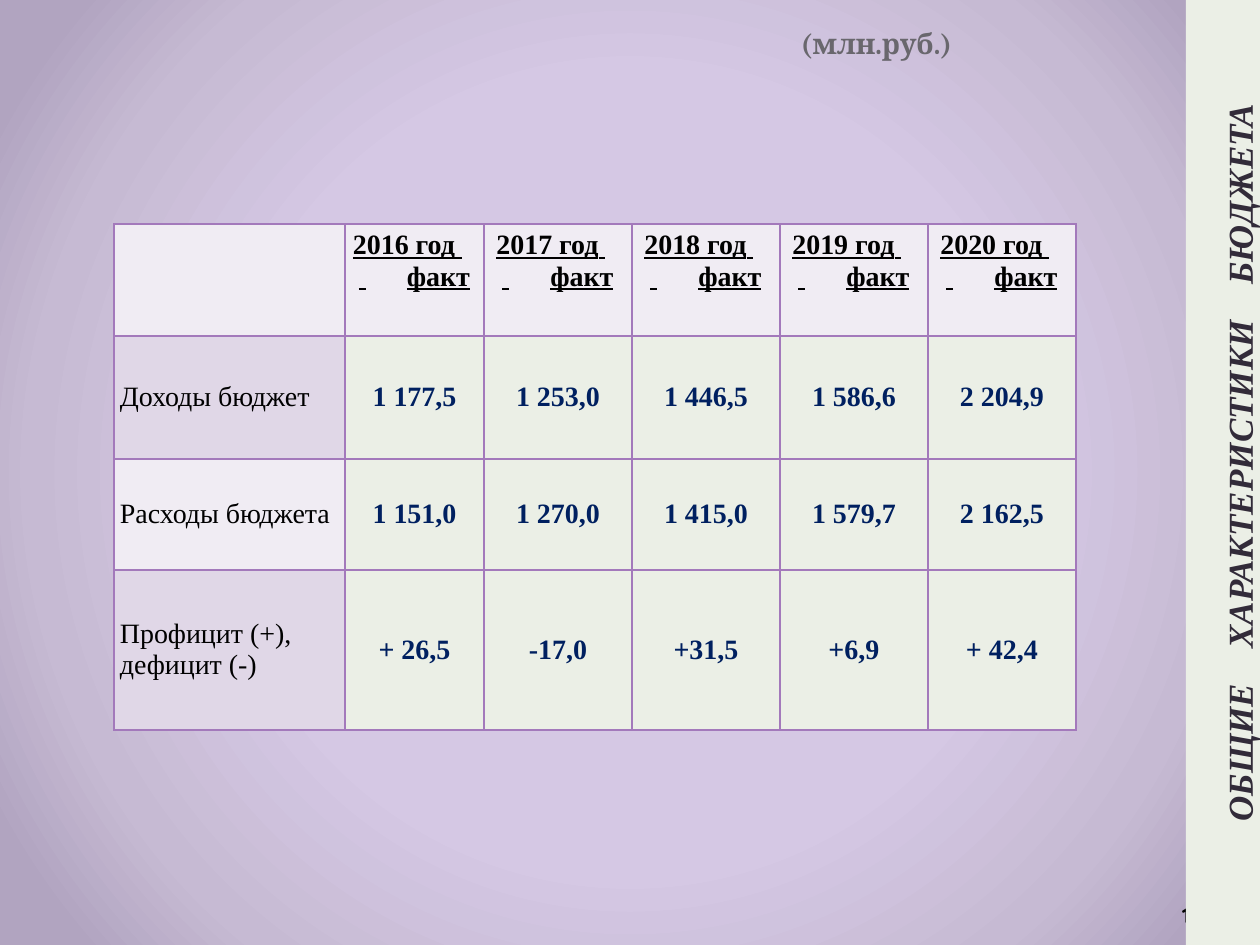
from pptx import Presentation, oxml
from pptx import util as u
from pptx.dml import color
from pptx.enum import shapes, text
from pptx.oxml import ns

PX = 914400 // 126
SERIF = "Times New Roman"
YEARS = ["2016", "2017", "2018", "2019", "2020"]
ROWS = [
    ("Доходы бюджет", "1 177,5", "1 253,0", "1 446,5", "1 586,6", "2 204,9"),
    ("Расходы бюджета", "1 151,0", "1 270,0", "1 415,0", "1 579,7", "2 162,5"),
    ("Профицит (+), дефицит (-)", "+ 26,5", "-17,0", "+31,5", "+6,9", "+ 42,4"),
]
BAND_WORDS = ["ОБЩИЕ", "ХАРАКТЕРИСТИКИ", "БЮДЖЕТА"]
COLUMN_WIDTHS = [231, 139, 148, 148, 148, 148]
ROW_HEIGHTS = [112, 123, 111, 160]
GRADIENT = [(50, "D5C8E4"), (76, "C6BAD3"), (92, "B1A4C0")]
LABEL_FILLS = ["F0ECF3", "E0D7E7"]
PALE_GREEN = "EBEFE6"
BORDER = "A379BB"

UNIT = {"name": "Cambria", "size": 16.2, "bold": True, "color": "69676D"}
HEADER = {"name": SERIF, "size": 16, "bold": True, "underline": True, "color": "000000"}
LABEL = {"name": SERIF, "size": 16, "bold": False, "color": "000000"}
VALUE = {"name": SERIF, "size": 16, "bold": True, "color": "002060"}
NUMBER = {"name": "Quicksand", "size": 12, "bold": True, "color": "000000"}
BAND = {"name": SERIF, "size": 20, "bold": True, "italic": True, "color": "322B39"}


def px(*lengths):
    return [round(length * PX) for length in lengths]


def rgb(value):
    return color.RGBColor.from_string(value)


def paint(fill, value):
    fill.solid()
    fill.fore_color.rgb = rgb(value)


def write(para, words, style, gap=0):
    """Add a span; gap is extra letter spacing in points."""
    span = para.add_run()
    span.text = words
    for name, value in style.items():
        if name == "color":
            span.font.color.rgb = rgb(value)
        else:
            setattr(span.font, name, u.Pt(value) if name == "size" else value)
    if gap:
        span.font._element.set("spc", str(round(gap * 100)))


def set_frame(frame, anchor, margins):
    frame.word_wrap = True
    frame.auto_size = text.MSO_AUTO_SIZE.NONE
    frame.vertical_anchor = anchor
    for side, value in zip(("left", "top", "right", "bottom"), px(*margins)):
        setattr(frame, "margin_" + side, value)


def add_background(page):
    stops = "".join(
        f'<a:gs pos="{place * 1000}"><a:srgbClr val="{value}"/></a:gs>'
        for place, value in GRADIENT)
    page.background.fill.solid()
    solid = page._element.find(".//" + ns.qn("p:bgPr")).find(ns.qn("a:solidFill"))
    gradient = oxml.parse_xml(
        f'<a:gradFill {ns.nsdecls("a")} rotWithShape="1"><a:gsLst>{stops}</a:gsLst>'
        '<a:path path="circle"><a:fillToRect l="50000" t="50000" r="50000" b="50000"/>'
        '</a:path></a:gradFill>')
    solid.getparent().replace(solid, gradient)


def add_title(page):
    title = page.shapes.title
    title.left, title.top, title.width, title.height = px(650, 20, 466, 46)
    set_frame(title.text_frame, text.MSO_ANCHOR.MIDDLE, (0, 0, 164, 0))
    para = title.text_frame.paragraphs[0]
    para.alignment = text.PP_ALIGN.RIGHT
    write(para, "(млн.руб.)", UNIT)


def format_cell(cell, fill, anchor, align):
    cell.vertical_anchor = anchor
    for side in ("left", "top", "right", "bottom"):
        setattr(cell, "margin_" + side, px(6)[0])
    properties = cell._tc.get_or_add_tcPr()
    for edge in ("lnL", "lnR", "lnT", "lnB"):
        properties.append(oxml.parse_xml(
            f'<a:{edge} {ns.nsdecls("a")} w="12700"><a:solidFill>'
            f'<a:srgbClr val="{BORDER}"/></a:solidFill></a:{edge}>'))
    paint(cell.fill, fill)
    para = cell.text_frame.paragraphs[0]
    para.alignment = align
    return para


def add_budget_table(page):
    frame = page.shapes.add_table(
        len(ROW_HEIGHTS), len(COLUMN_WIDTHS),
        *px(114, 224, sum(COLUMN_WIDTHS), sum(ROW_HEIGHTS)))
    table = frame.table
    table.first_row = table.horz_banding = False
    for column, width in zip(table.columns, px(*COLUMN_WIDTHS)):
        column.width = width
    for row, height in zip(table.rows, px(*ROW_HEIGHTS)):
        row.height = height

    center, left = text.PP_ALIGN.CENTER, text.PP_ALIGN.LEFT
    top, middle = text.MSO_ANCHOR.TOP, text.MSO_ANCHOR.MIDDLE
    format_cell(table.cell(0, 0), LABEL_FILLS[0], top, left)
    for c, year in enumerate(YEARS, 1):
        para = format_cell(table.cell(0, c), LABEL_FILLS[0], top, center)
        write(para, year + " год", HEADER)
        write(para, " ", HEADER, gap=8)
        para.add_line_break()
        write(para, " ", HEADER, gap=23.4)
        write(para, "факт", HEADER)
    for r, (label, *values) in enumerate(ROWS, 1):
        para = format_cell(table.cell(r, 0), LABEL_FILLS[r % 2], middle, left)
        write(para, label, LABEL)
        for c, value in enumerate(values, 1):
            para = format_cell(table.cell(r, c), PALE_GREEN, middle, center)
            write(para, value, VALUE)


def add_page_number(page):
    box = page.shapes.add_textbox(*px(1178, 900, 81, 31))
    set_frame(box.text_frame, text.MSO_ANCHOR.MIDDLE, (4, 6, 6, 6))
    write(box.text_frame.paragraphs[0], "16", NUMBER)


def add_side_band(page):
    length, depth = 945, 74
    left, top = 1260 - (length + depth) / 2, (length - depth) / 2
    band = page.shapes.add_shape(
        shapes.MSO_SHAPE.RECTANGLE, *px(left, top, length, depth))
    band.rotation = 270
    band.shadow.inherit = False
    paint(band.fill, PALE_GREEN)
    band.line.fill.background()
    set_frame(band.text_frame, text.MSO_ANCHOR.BOTTOM, (26, 0, 6, 0))
    para = band.text_frame.paragraphs[0]
    para.alignment = text.PP_ALIGN.CENTER
    for i, word in enumerate(BAND_WORDS):
        if i:
            write(para, " ", BAND, gap=15)
        write(para, word, BAND)


def main():
    deck = Presentation()
    deck.slide_width, deck.slide_height = px(1260, 945)
    page = deck.slides.add_slide(deck.slide_layouts[5])
    add_background(page)
    add_title(page)
    add_budget_table(page)
    add_page_number(page)
    add_side_band(page)
    deck.save("out.pptx")


if __name__ == "__main__":
    main()
